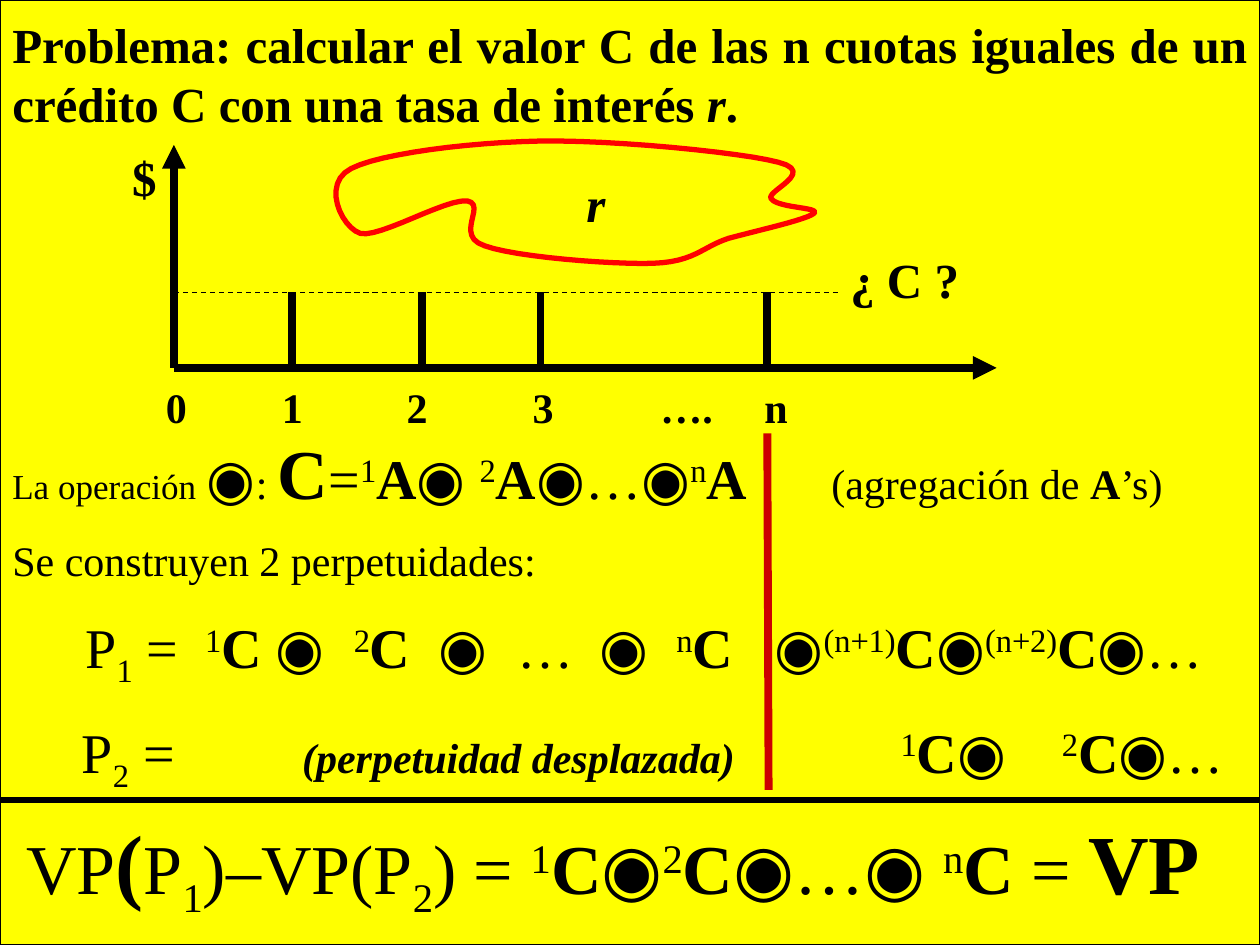
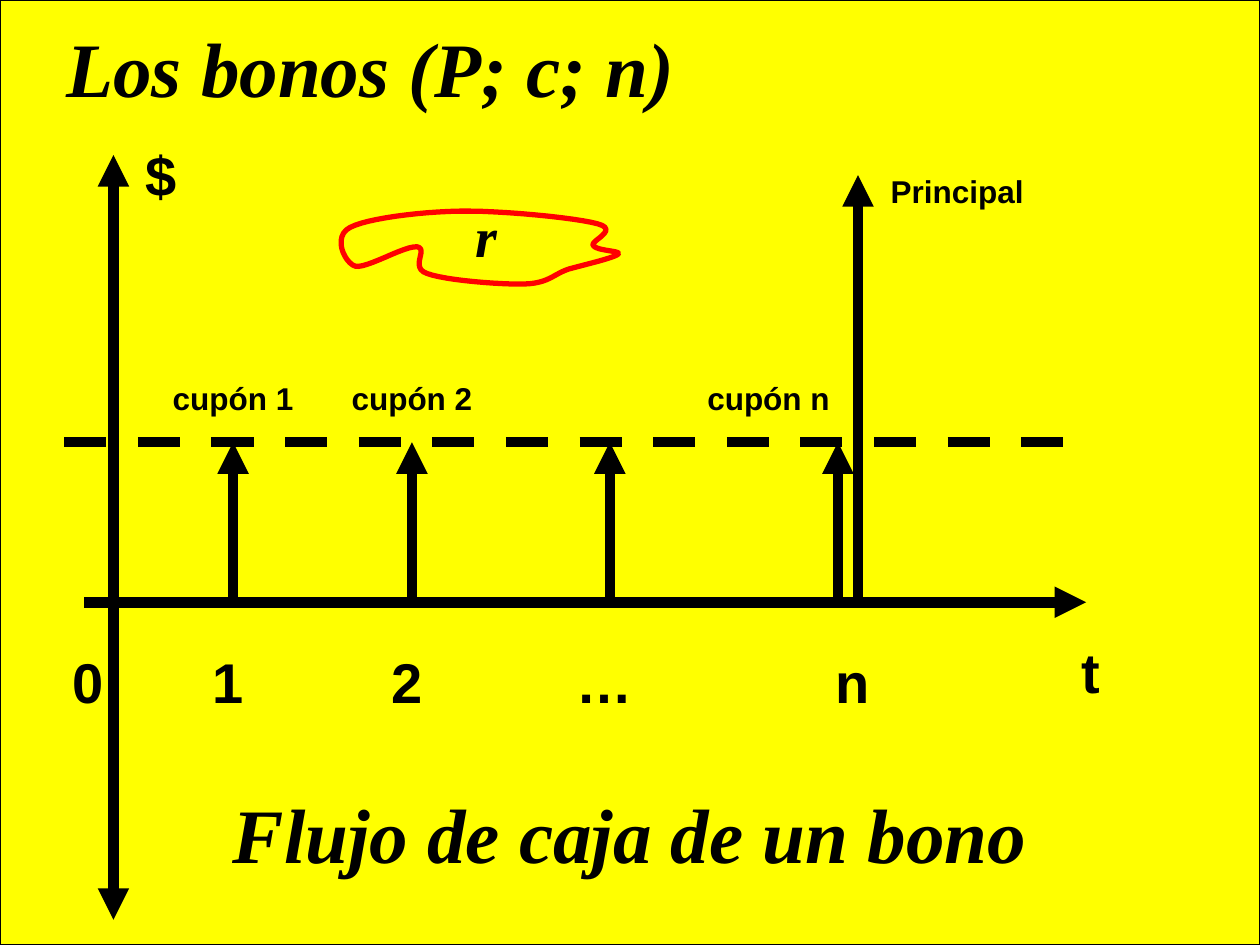
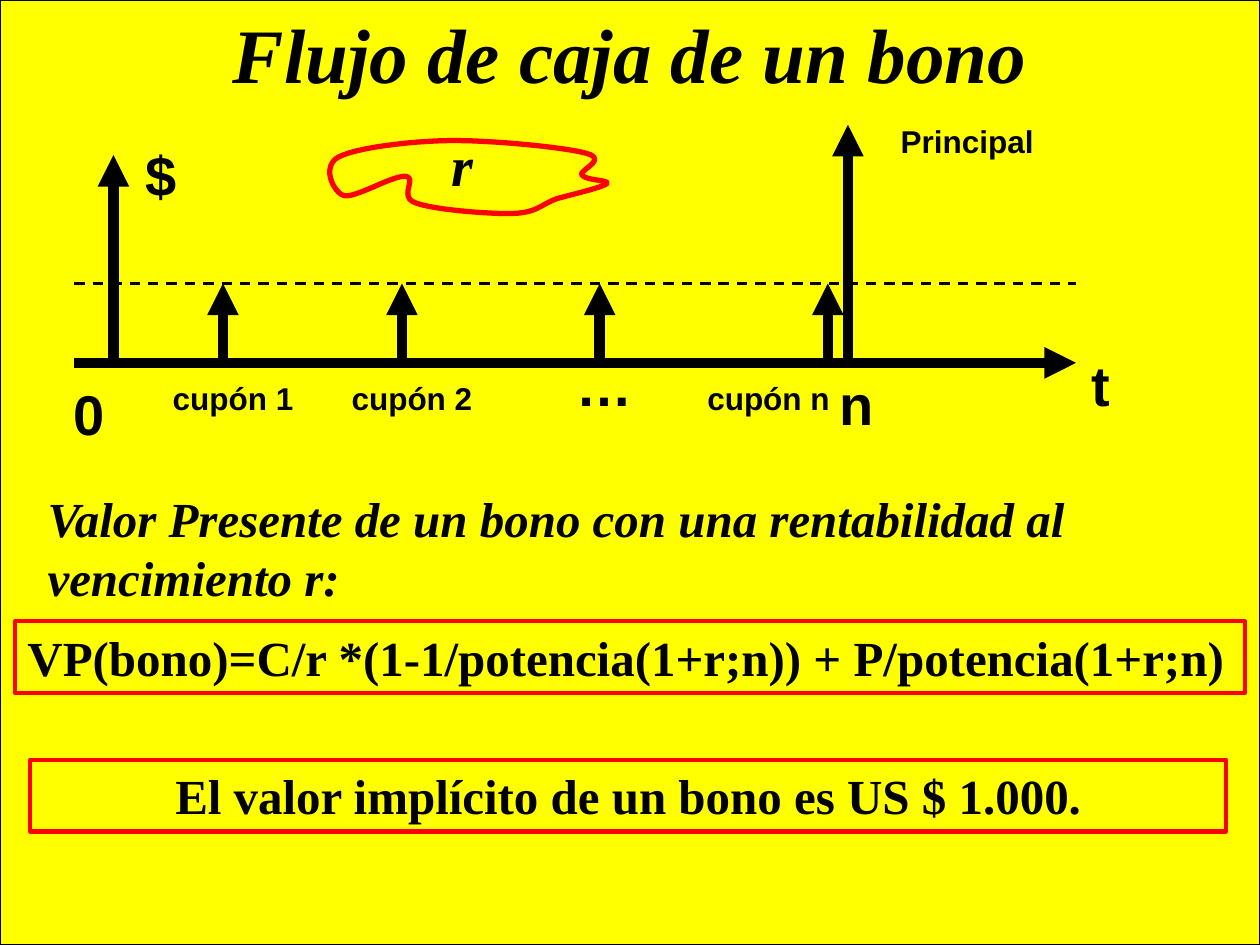
from dataclasses import dataclass

from lxml.etree import SubElement
from pptx import Presentation
from pptx.dml.color import RGBColor
from pptx.enum.dml import MSO_LINE_DASH_STYLE as Dash
from pptx.enum.shapes import MSO_CONNECTOR as Connector, MSO_SHAPE as Preset
from pptx.enum.text import MSO_ANCHOR as Anchor, MSO_AUTO_SIZE as AutoSize, PP_ALIGN as Align
from pptx.oxml.ns import qn
from pptx.util import Inches, Pt


@dataclass(frozen=True)
class Theme:
    """Colours, fonts, type sizes and line widths of the slides."""
    paper: RGBColor = RGBColor(0xFF, 0xFF, 0x00)
    ink: RGBColor = RGBColor(0x00, 0x00, 0x00)
    red: RGBColor = RGBColor(0xFF, 0x00, 0x00)
    divider: RGBColor = RGBColor(0xCC, 0x00, 0x00)
    serif: str = "Times New Roman"
    sans: str = "Arial"
    title: int = 44
    formula: int = 32
    heading: int = 28
    body: int = 24
    small: int = 18
    hairline: float = 0.75
    frame: float = 2.5
    outline: float = 3
    axis: float = 4.5
    arrow: float = 6


@dataclass(frozen=True)
class Box:
    """A region in inches."""
    left: float
    top: float
    width: float
    height: float

    def lengths(self):
        """Return the four sides as lengths."""
        return [Inches(v) for v in (self.left, self.top, self.width, self.height)]


THEME = Theme()
PAGE = Box(0, 0, 10, 7.5)
BOLD = {"bold": True}
SUP = {"baseline": 30}
SUB = {"baseline": -25}
BODY = {"size": THEME.body}
LARGE = {"size": 40}
HUGE = {"size": 48, "bold": True}
TITLE = {"size": THEME.title, "bold": True, "italic": True}

CLOUD_START = (6, 23)
CLOUD_CURVES = [
    ((11.8, 11), (29.7, 2), (43.8, 1)),
    ((58.2, 0), (83.9, 10), (91.4, 18)),
    ((99.2, 26), (88.9, 41), (89.9, 47)),
    ((91.2, 55), (100, 54), (98.5, 59)),
    ((97, 64), (86.9, 73), (81.4, 79)),
    ((76.1, 86), (74.6, 98), (66.2, 99)),
    ((58.2, 100), (38.8, 94), (32.7, 85)),
    ((26.4, 77), (33.2, 52), (29.2, 49)),
    ((24.9, 47), (11.6, 79), (7.8, 75)),
    ((4, 70), (0, 35), CLOUD_START),
]


def add_run(paragraph, text, size, font=THEME.serif, bold=False, italic=False, baseline=0):
    """Add one formatted run; baseline is a percentage."""
    run = paragraph.add_run()
    run.text = text
    run.font.size = Pt(size)
    run.font.name = font
    run.font.bold = bold
    run.font.italic = italic
    run.font.color.rgb = THEME.ink
    if baseline:
        run._r.get_or_add_rPr().set("baseline", str(baseline * 1000))


def set_spacing(paragraph, before, tabs):
    """Set the space before in percent and the tab stops in inches."""
    properties = paragraph._p.get_or_add_pPr()
    space = SubElement(properties, qn("a:spcBef"))
    SubElement(space, qn("a:spcPct"), val=str(before * 1000))
    stops = SubElement(properties, qn("a:tabLst"))
    for stop in tabs:
        SubElement(stops, qn("a:tab"), pos=str(Inches(stop)), algn="l")


def write(slide, box, text, align=Align.LEFT, anchor=Anchor.TOP, framed=False, **style):
    """Write a string or a list of (runs, space before, tab stops) in a box."""
    if framed:
        holder = slide.shapes.add_shape(Preset.RECTANGLE, *box.lengths())
        holder.shadow.inherit = False
        holder.fill.background()
        holder.line.color.rgb = THEME.red
        holder.line.width = Pt(THEME.frame)
    else:
        holder = slide.shapes.add_textbox(*box.lengths())
    frame = holder.text_frame
    frame.word_wrap = True
    frame.auto_size = AutoSize.SHAPE_TO_FIT_TEXT
    frame.vertical_anchor = anchor
    paragraphs = [([(text, {})], 0, [])] if isinstance(text, str) else text
    for index, (runs, before, tabs) in enumerate(paragraphs):
        paragraph = frame.add_paragraph() if index else frame.paragraphs[0]
        paragraph.alignment = align
        set_spacing(paragraph, before, tabs)
        for words, change in runs:
            add_run(paragraph, words, **{**style, **change})


def write_centered(slide, center, top, text, width=1.3, height=0.63, **style):
    """Write a short label centred on a horizontal position."""
    write(slide, Box(center - width / 2, top, width, height), text, align=Align.CENTER, **style)


def draw_line(slide, start, end, width, color=THEME.ink, arrow=False, dash=None):
    """Draw a straight line, with an arrowhead at its end if asked."""
    points = [Inches(v) for v in (*start, *end)]
    connector = slide.shapes.add_connector(Connector.STRAIGHT, *points)
    connector.line.color.rgb = color
    connector.line.width = Pt(width)
    if dash:
        connector.line.dash_style = dash
    properties = connector._element.spPr
    if arrow:
        SubElement(properties.find(qn("a:ln")), qn("a:tailEnd"), type="triangle")
    SubElement(properties, qn("a:effectLst"))


def cloud_points(steps=12):
    """Return points along the cloud outline in percent of its box."""
    points, start = [], CLOUD_START
    for curve in CLOUD_CURVES:
        for step in range(1, steps + 1):
            t = step / steps
            weights = ((1 - t) ** 3, 3 * t * (1 - t) ** 2, 3 * t * t * (1 - t), t ** 3)
            corners = (start, *curve)
            points.append(tuple(sum(w * c[axis] for w, c in zip(weights, corners)) for axis in (0, 1)))
        start = curve[-1]
    return points


def draw_rate_cloud(slide, box, rate_center, rate_top, size):
    """Draw the red cloud with the rate r inside."""
    points = [(Inches(box.left + box.width * x / 100), Inches(box.top + box.height * y / 100))
              for x, y in cloud_points()]
    builder = slide.shapes.build_freeform(*points[-1])
    builder.add_line_segments(points[:-1], close=True)
    cloud = builder.convert_to_shape()
    cloud.shadow.inherit = False
    cloud.fill.background()
    cloud.line.color.rgb = THEME.red
    cloud.line.width = Pt(THEME.outline)
    write_centered(slide, box.left + rate_center, box.top + rate_top, "r", width=0.55,
                   size=size, bold=True, italic=True)


def new_slide(deck):
    """Add a blank slide with the yellow page."""
    slide = deck.slides.add_slide(deck.slide_layouts[6])
    page = slide.shapes.add_shape(Preset.RECTANGLE, *PAGE.lengths())
    page.shadow.inherit = False
    page.fill.solid()
    page.fill.fore_color.rgb = THEME.paper
    page.line.color.rgb = THEME.ink
    page.line.width = Pt(THEME.hairline)
    return slide


def draw_installments(slide, box):
    """Draw the timeline of n equal instalments; the box spans both axes."""
    bottom = box.top + box.height
    level = box.top + 1.17
    heading = {"size": THEME.heading, "bold": True}
    origin = (box.left, bottom)
    draw_line(slide, origin, (box.left + box.width, bottom), THEME.axis, arrow=True)
    draw_line(slide, origin, (box.left, box.top), THEME.axis, arrow=True)
    for tick in (0.94, 1.97, 2.91, 4.71):
        draw_line(slide, (box.left + tick, level), (box.left + tick, bottom), THEME.axis)
    for period, center in zip(("0", "1", "2", "3", "….", "n"), (0.02, 0.94, 1.93, 2.93, 4.07, 4.78)):
        write_centered(slide, box.left + center, bottom + 0.06, period, width=0.8, height=0.5,
                       size=THEME.body, bold=True)
    draw_line(slide, (box.left, level), (box.left + 5.27, level), THEME.hairline, dash=Dash.DASH)
    write(slide, Box(box.left - 0.43, box.top - 0.03, 0.55, 0.57), "$", **heading)
    write(slide, Box(box.left + 5.27, box.top + 0.78, 1.1, 0.57), "¿ C ?", **heading)


def term(order, letter="C"):
    """Return the runs of a bold letter with its order raised before it."""
    return [(order, SUP), (letter, BOLD)]


def write_perpetuities(slide, box):
    """Write the derivation from two perpetuities."""
    operation = [
        ("La operación", {"size": 20}), (" ", BODY), ("◉", {}), (": ", BODY),
        ("C", {**LARGE, **BOLD}), ("=", {}), *term("1", "A"), ("◉ ", {}), *term("2", "A"),
        ("◉…◉", {}), *term("n", "A"), ("\t", {}), ("(agregación de ", BODY),
        ("A", {**BODY, **BOLD}), ("’s)", BODY)]
    first = [
        ("\t", BODY), ("P", {}), ("1", SUB), (" =\t", {}), *term("1"), (" ◉\t", {}),
        *term("2"), ("\t◉\t…\t◉\t", {}), *term("n"), ("\t◉", {}), *term("(n+1)"),
        ("◉", {}), *term("(n+2)"), ("◉…", {})]
    second = [
        ("\tP", {}), ("2", SUB), (" =\t", {}),
        ("(perpetuidad desplazada)", {**BODY, **BOLD, "italic": True}),
        ("\t", {}), *term("1"), ("◉\t", {}), *term("2"), ("◉…", {})]
    difference = [
        ("VP", {}), ("(", HUGE), ("P", {}), ("1", SUB), (")–VP(P", {}), ("2", SUB), (") = ", {}),
        *term("1"), ("◉", {}), *term("2"), ("◉…◉ ", {}), *term("n"), (" = ", {}), ("VP", HUGE)]
    result = [(" ", {})] + [(words, {**LARGE, **change}) for words, change in difference]
    write(slide, box, [
        (operation, 50, [6.5]),
        ([("Se construyen 2 perpetuidades:", BODY)], 50, []),
        (first, 50, [0.58, 1.53, 2.71, 3.38, 4.01, 4.66, 5.27, 6.05]),
        (second, 50, [0.55, 2.3, 7.05, 8.33]),
        (result, 20, []),
    ], size=THEME.formula)


def draw_bond_flow(slide, box, shift, coupon_height, principal_top, principal_gap,
                   dash_start, dash_width, coupon_label_top, periods):
    """Draw a bond's cash flow; the box starts at the value axis and ends on the time axis."""
    bottom = box.top + box.height
    left = box.left + shift
    level = bottom - coupon_height
    small = {"size": THEME.small, "font": THEME.sans, "bold": True}
    large = {"size": THEME.formula, "font": THEME.sans, "bold": True}
    draw_line(slide, (left - 0.23, bottom), (left + 7.72, bottom), THEME.arrow, arrow=True)
    principal_x = left + 5.91
    arrows = [(box.left, box.top), (principal_x, box.top + principal_top)]
    arrows += [(left + x, level) for x in (0.95, 2.37, 3.94, 5.75)]
    for x, tip in arrows:
        draw_line(slide, (x, bottom), (x, tip), THEME.arrow, arrow=True)
    dash_left = left + dash_start
    draw_line(slide, (dash_left, level), (dash_left + 7.95, level), dash_width, dash=Dash.DASH)
    for coupon, center in (("cupón 1", 0.95), ("cupón 2", 2.37), ("cupón n", 5.2)):
        write_centered(slide, box.left + center, bottom + coupon_label_top, coupon, height=0.4, **small)
    for period, center, top in periods:
        write_centered(slide, box.left + center, bottom + top, period, width=0.86, **large)
    write(slide, Box(box.left + 0.16, box.top - 0.16, 0.86, 0.63), "$", **large)
    write(slide, Box(principal_x + principal_gap, box.top + principal_top - 0.07, 1.42, 0.4),
          "Principal", **small)


def build_installments_slide(deck):
    """Build the slide on the value of equal instalments."""
    slide = new_slide(deck)
    problem = "Problema: calcular el valor C de las n cuotas iguales de un crédito C con una tasa de interés "
    write(slide, Box(0, 0.07, 10, 1.03), [([(problem, {}), ("r", {"italic": True}), (".", {})], 0, [])],
          align=Align.JUSTIFY, anchor=Anchor.MIDDLE, size=THEME.heading, bold=True)
    draw_installments(slide, Box(1.38, 1.15, 6.53, 1.77))
    write_perpetuities(slide, Box(0, 3.36, 10, 3.97))
    draw_line(slide, (0, 6.35), (10, 6.35), THEME.outline)
    draw_line(slide, (6.09, 3.44), (6.1, 6.27), THEME.axis, color=THEME.divider)
    draw_rate_cloud(slide, Box(2.55, 1.11, 3.97, 0.99), 2.18, 0.22, THEME.heading)


def write_flow_title(slide, top):
    """Write the cash flow title across the page."""
    write(slide, Box(0, top, 10, 0.83), "Flujo de caja de un bono", align=Align.CENTER, **TITLE)


def build_bond_slide(deck):
    """Build the slide that introduces bonds."""
    slide = new_slide(deck)
    write(slide, Box(0.43, 0, 9, 1.06), "Los bonos (P; c; n)", anchor=Anchor.MIDDLE, **TITLE)
    periods = [("0", -0.2, 0.31), ("1", 0.91, 0.31), ("2", 2.33, 0.31),
               ("…", 3.9, 0.31), ("n", 5.87, 0.31), ("t", 7.76, 0.23)]
    draw_bond_flow(slide, Box(0.9, 1.23, 7.72, 3.55), shift=0, coupon_height=1.27,
                   principal_top=0.16, principal_gap=0.16, dash_start=-0.39,
                   dash_width=THEME.arrow, coupon_label_top=-1.82, periods=periods)
    draw_line(slide, (0.9, 3.91), (0.9, 7.3), THEME.arrow, arrow=True)
    write_flow_title(slide, 6.19)
    draw_rate_cloud(slide, Box(2.64, 1.67, 2.3, 0.59), 1.22, -0.12, THEME.formula)


def build_valuation_slide(deck):
    """Build the slide on the present value of a bond."""
    slide = new_slide(deck)
    write_flow_title(slide, 0)
    periods = [("0", -0.19, 0.08), ("…", 3.9, -0.15), ("n", 5.9, 0), ("t", 7.84, -0.15)]
    draw_bond_flow(slide, Box(0.9, 1.23, 7.72, 1.65), shift=-0.08, coupon_height=0.63,
                   principal_top=-0.24, principal_gap=0.32, dash_start=-0.23,
                   dash_width=1.5, coupon_label_top=0.08, periods=periods)
    draw_rate_cloud(slide, Box(2.55, 1.11, 2.3, 0.59), 1.12, -0.12, THEME.formula)
    heading = {"size": THEME.heading, "bold": True}
    write(slide, Box(0.28, 3.83, 9.37, 1.04),
          "Valor Presente de un bono con una rentabilidad al vencimiento r:", italic=True, **heading)
    write(slide, Box(0.12, 4.93, 9.76, 0.57),
          "VP(bono)=C/r *(1-1/potencia(1+r;n)) + P/potencia(1+r;n)", framed=True, **heading)
    write(slide, Box(0.24, 6.03, 9.49, 0.57), "El valor implícito de un bono es US $ 1.000.",
          align=Align.CENTER, framed=True, **heading)


def main():
    """Build and save the deck."""
    deck = Presentation()
    deck.slide_width = Inches(PAGE.width)
    deck.slide_height = Inches(PAGE.height)
    build_installments_slide(deck)
    build_bond_slide(deck)
    build_valuation_slide(deck)
    deck.save("out.pptx")


if __name__ == "__main__":
    main()
